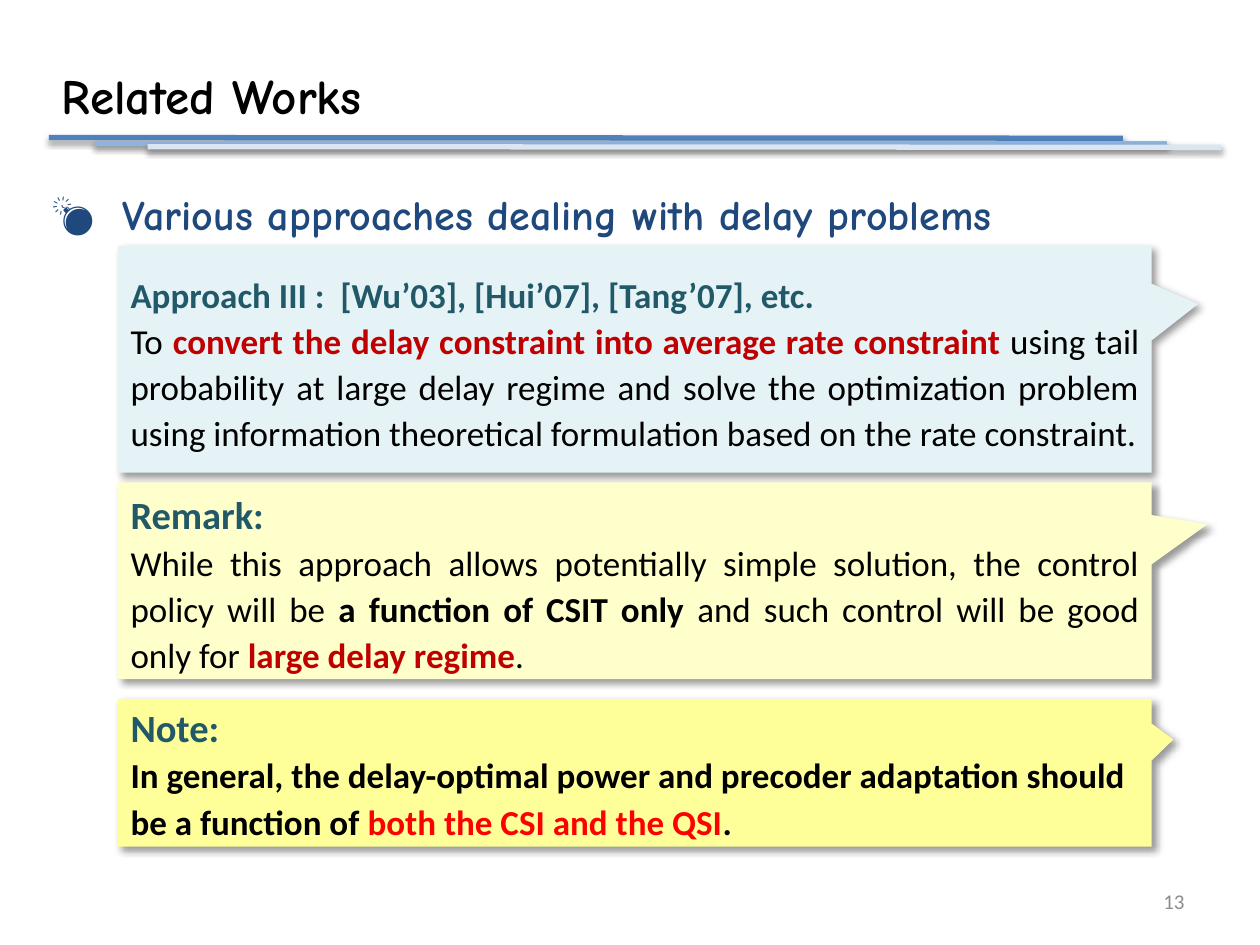
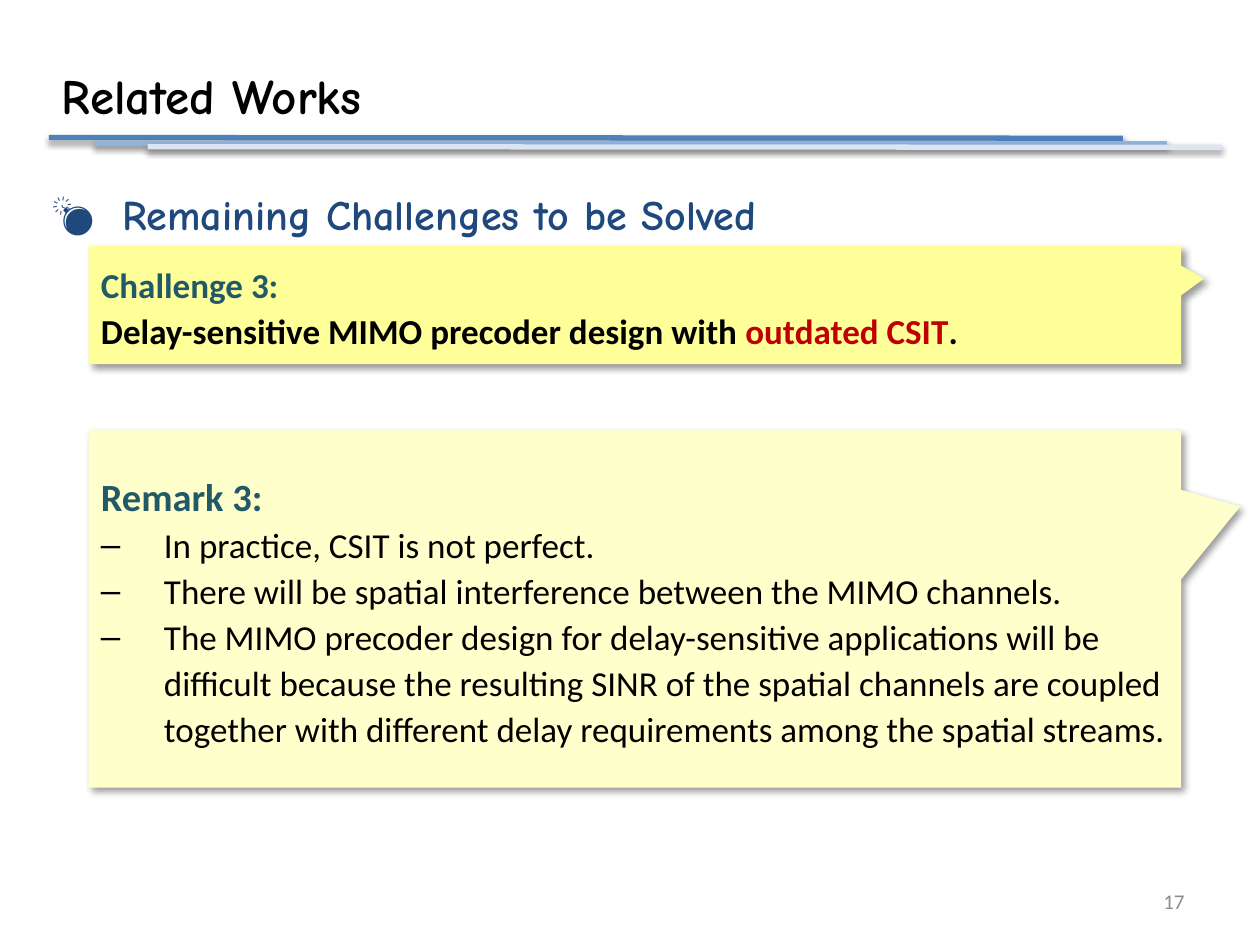
from lxml import etree
from pptx import Presentation
from pptx.dml.color import RGBColor
from pptx.enum import shapes, text
from pptx.oxml import ns
from pptx.util import Pt

HEAD_FONT, BODY_FONT, BULLET_FONT = "Comic Neue", "Calibri", "Arial"
BLACK, NAVY, TEAL, GRAY = "000000", "1F497D", "215968", "8C8C8C"
DARK_RED, RED = "C00000", "FF0000"
ICE, CREAM, YELLOW = "E5F3F7", "FFFFCC", "FFFF99"
RULES = [(28, 78.6, 641.6, 79, "4F81BD"),
         (54, 82, 666.6, 82, "8EB4E3"),
         (84.4, 83.8, 697.6, 84.2, "DCE6F2")]
LEFT, RIGHT, JUSTIFY = (text.PP_ALIGN.LEFT, text.PP_ALIGN.RIGHT,
                        text.PP_ALIGN.JUSTIFY)


def rgb(color):
    return RGBColor.from_string(color)


def child(parent, tag, **attrs):
    return etree.SubElement(parent, ns.qn(tag),
                            {k: str(v) for k, v in attrs.items()})


def add_shadow(sp, opacity, blur, dist, angle):
    effects = child(sp._element.spPr, "a:effectLst")
    outer = child(effects, "a:outerShdw", blurRad=Pt(blur), dist=Pt(dist),
                  dir=angle * 60000, algn="t", rotWithShape=0)
    color = child(outer, "a:srgbClr", val=BLACK)
    child(color, "a:alpha", val=opacity * 1000)


def write(tf, runs, size=20, color=BLACK, bold=False, font=BODY_FONT,
          align=LEFT, spacing=1.1, before=0, bullet=None, indent=0):
    p = tf.paragraphs[0] if not tf.text else tf.add_paragraph()
    p.alignment, p.line_spacing = align, spacing
    p.space_before = Pt(before)
    if bullet:
        pPr = p._p.get_or_add_pPr()
        pPr.set("marL", str(Pt(indent)))
        pPr.set("indent", str(-Pt(indent)))
        child(pPr, "a:buFont", typeface=BULLET_FONT)
        child(pPr, "a:buChar", char=bullet)
    for part in [runs] if isinstance(runs, str) else runs:
        words, run_color, run_bold = (
            (part, color, bold) if isinstance(part, str) else part)
        r = p.add_run()
        r.text = words
        r.font.name, r.font.size, r.font.bold = font, Pt(size), run_bold
        r.font.color.rgb = rgb(run_color)


def add_text_box(slide, box, anchor=text.MSO_ANCHOR.TOP):
    tf = slide.shapes.add_textbox(*map(Pt, box)).text_frame
    tf.word_wrap, tf.vertical_anchor = True, anchor
    return tf


def add_header(slide, title, box):
    for x1, y1, x2, y2, color in RULES:
        rule = slide.shapes.add_connector(
            shapes.MSO_CONNECTOR.STRAIGHT, Pt(x1), Pt(y1), Pt(x2), Pt(y2))
        rule.line.color.rgb, rule.line.width = rgb(color), Pt(3)
        add_shadow(rule, 35, 3.1, 1.8, 90)
    sp = slide.shapes.title
    sp.left, sp.top, sp.width, sp.height = map(Pt, box)
    tf = sp.text_frame
    tf.word_wrap, tf.vertical_anchor = False, text.MSO_ANCHOR.TOP
    tf.auto_size = text.MSO_AUTO_SIZE.SHAPE_TO_FIT_TEXT
    write(tf, title, size=28, bold=True, font=HEAD_FONT, spacing=1.0)


def add_callout(slide, box, fill, tip):
    sp = slide.shapes.add_shape(
        shapes.MSO_SHAPE.RECTANGULAR_CALLOUT, *map(Pt, box))
    sp.adjustments[0], sp.adjustments[1] = tip
    sp.fill.solid()
    sp.fill.fore_color.rgb = rgb(fill)
    sp.line.fill.background()
    add_shadow(sp, 40, 4, 3, 45)
    tf = sp.text_frame
    tf.word_wrap, tf.vertical_anchor = True, text.MSO_ANCHOR.MIDDLE
    return tf


def add_approach(slide, box, heading, runs):
    tf = add_callout(slide, box, ICE, (0.545, -0.244))
    write(tf, heading, color=TEAL, bold=True, spacing=1.2)
    write(tf, runs, align=JUSTIFY)


def add_remark(slide, box, heading, paragraphs, **style):
    tf = add_callout(slide, box, CREAM, (0.554, -0.287))
    write(tf, heading, size=22, color=TEAL, bold=True, before=6)
    for runs in paragraphs:
        write(tf, runs, **style)


def add_key_point(slide, box, heading, runs, **style):
    tf = add_callout(slide, box, YELLOW, (0.521, -0.225))
    write(tf, heading, color=TEAL, bold=True, **style)
    write(tf, runs, bold=True)


def add_slide(prs, topic, number):
    slide = prs.slides.add_slide(prs.slide_layouts[5])
    add_header(slide, "Related Works", (28, 33.8, 216.7, 41))
    tf = add_text_box(slide, (516, 500.4, 168, 28.8), text.MSO_ANCHOR.MIDDLE)
    write(tf, number, size=12, color=GRAY, align=RIGHT, spacing=1.0)
    tf = add_text_box(slide, (22.3, 90, 680.4, 427.7))
    write(tf, topic, size=24, color=NAVY, bold=True, font=HEAD_FONT,
          spacing=1.5, before=4.8, bullet="💣", indent=40.5)
    return slide


def build_approaches(prs):
    slide = add_slide(prs, "Various approaches dealing with delay problems",
                      "13")
    left, width = 67.5, 590.6
    add_approach(
        slide, (left, 140.6, width, 129.4),
        "Approach III :  [Wu’03], [Hui’07], [Tang’07], etc.",
        ["To ",
         ("convert the delay constraint into average rate constraint ",
          DARK_RED, True),
         "using tail probability at large delay regime and solve the "
         "optimization problem using information theoretical formulation "
         "based on the rate constraint."])
    add_remark(
        slide, (left, 275.6, width, 112.5), "Remark:",
        [["While this approach allows potentially simple solution, the "
          "control policy will be ",
          ("a function of CSIT only ", BLACK, True),
          "and such control will be good only for ",
          ("large delay regime", DARK_RED, True), "."]],
        align=JUSTIFY)
    add_key_point(
        slide, (left, 399.4, width, 84.4), "Note:",
        ["In general, the delay-optimal power and precoder adaptation "
         "should be a function of ",
         ("both the CSI and the QSI", RED, True), "."],
        size=22, spacing=1.0)


def build_challenges(prs):
    slide = add_slide(prs, "Remaining Challenges to be Solved", "17")
    left, width = 50.6, 624.4
    add_key_point(
        slide, (left, 140.6, width, 67.5), "Challenge 3:",
        ["Delay-sensitive MIMO precoder design with ",
         ("outdated CSIT", DARK_RED, True), "."])
    add_remark(
        slide, (left, 246, width, 204), "Remark 3:",
        ["In practice, CSIT is not perfect.",
         "There will be spatial interference between the MIMO channels.",
         "The MIMO precoder design for delay-sensitive applications will be "
         "difficult because the resulting SINR of the spatial channels are "
         "coupled together with different delay requirements among the "
         "spatial streams."],
        bullet="–", indent=36)


def main():
    prs = Presentation()
    prs.slide_width, prs.slide_height = Pt(720), Pt(540)
    build_approaches(prs)
    build_challenges(prs)
    prs.save("out.pptx")


if __name__ == "__main__":
    main()
